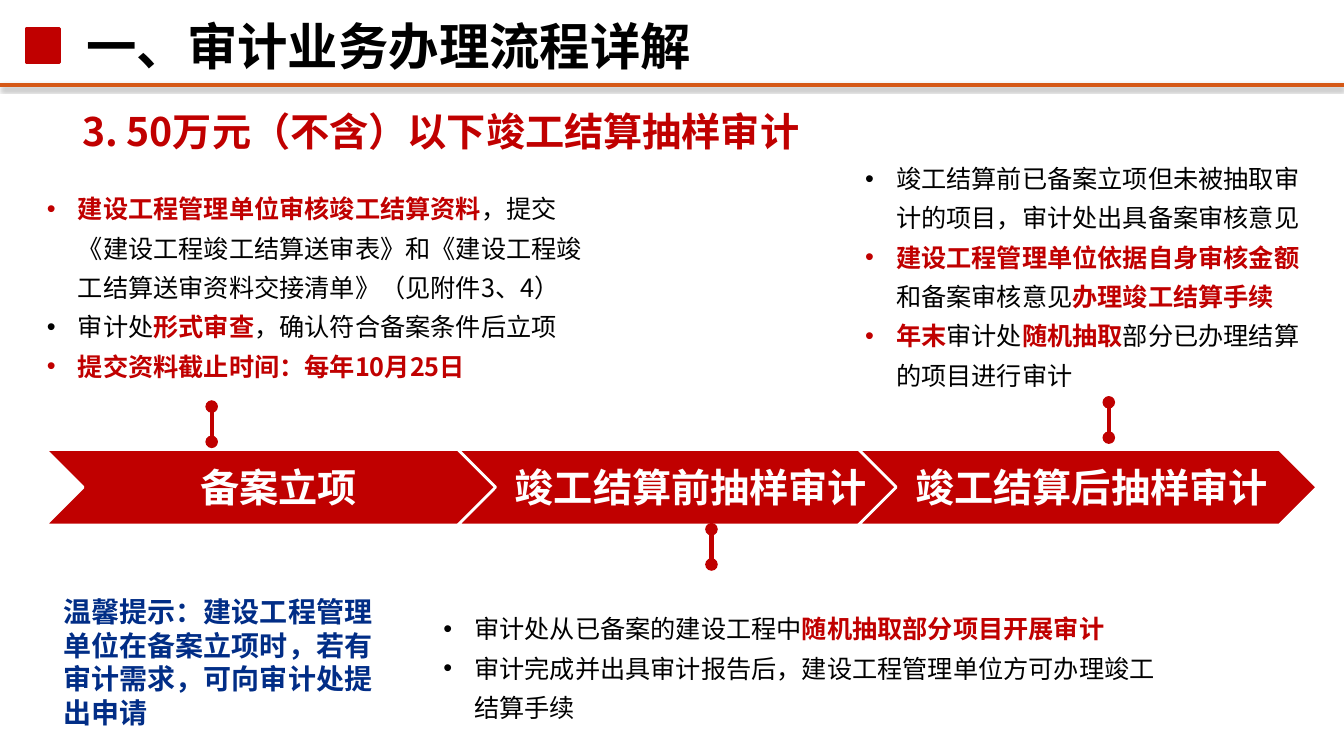
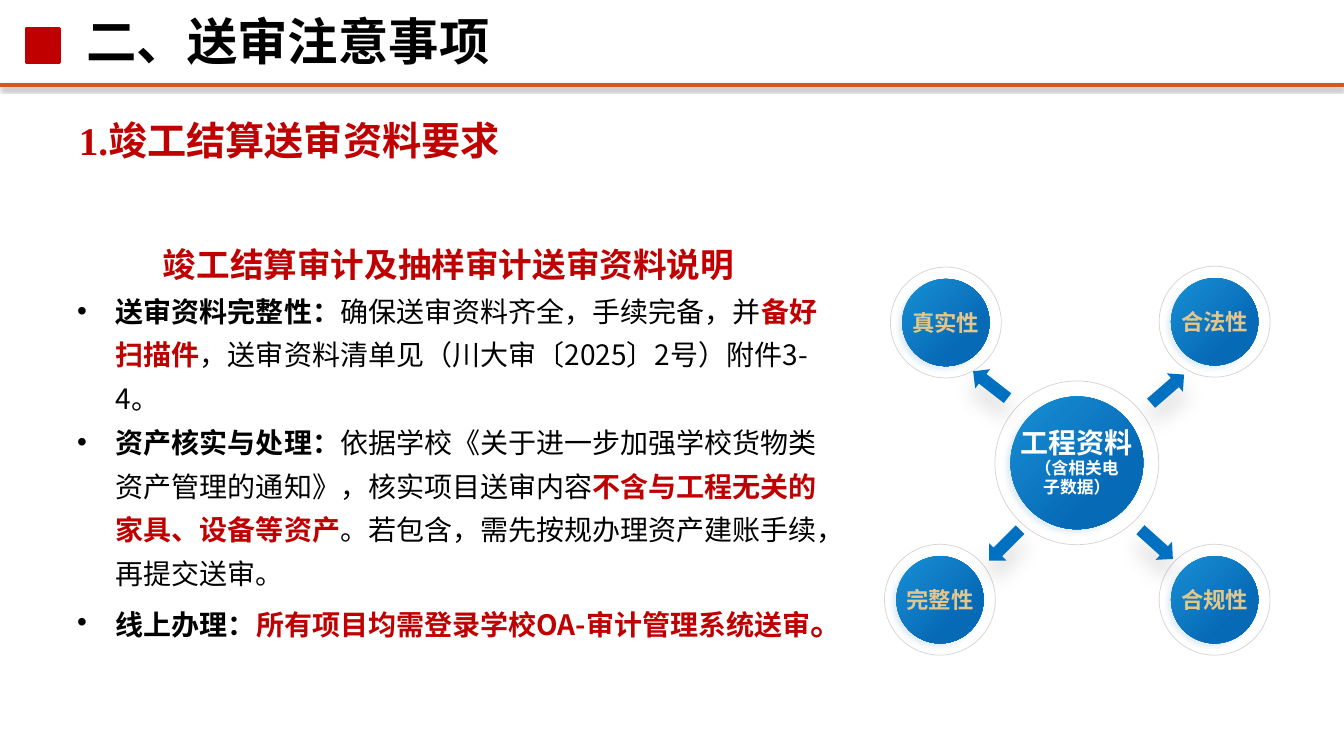
import pptx
import pptx.util
import pptx.dml.color
import pptx.enum.shapes
import pptx.enum.text
import pptx.oxml
import pptx.oxml.ns
from lxml import etree

Pt = pptx.util.Pt
KIND = pptx.enum.shapes.MSO_SHAPE
ALIGN = pptx.enum.text.PP_ALIGN
ANCHOR = pptx.enum.text.MSO_ANCHOR
qn = pptx.oxml.ns.qn

# Grid: 160 columns by 90 rows of square cells
COLS, ROWS = 160, 90
CELL = pptx.util.Inches(1) / 12

# Shared style
SANS, SERIF = "Noto Sans CJK SC", "Times New Roman"
RED, BLACK, WHITE = "C00000", "000000", "FFFFFF"
ORANGE, NAVY, BLUE, GOLD, GREY = "D55816", "012D86", "0070C0", "E2C68C", "595959"
DISC = ((0, "1890D6"), (0.71, "076AB6"))
# Shadows: colour, opacity, blur, distance, angle
RULE_SHADE = (BLACK, 35, 3.1, 1.8, 90)
ARROW_SHADE = ("404040", 20, 15, 10, 90)
DISC_SHADE = ("5B9BD5", 20, 4, 3, 135)


def cells(*nums):
    return [round(n * CELL) for n in nums]


def rgb(text):
    return pptx.dml.color.RGBColor.from_string(text)


def sub(node, tag, **attrs):
    return etree.SubElement(node, qn(tag), {k: str(v) for k, v in attrs.items()})


class Deck:
    def __init__(self):
        self.prs = pptx.Presentation()
        self.prs.slide_width, self.prs.slide_height = cells(COLS, ROWS)

    def page(self, title, top):
        """Start a slide with its band and title."""
        self.slide = self.prs.slides.add_slide(self.prs.slide_layouts[6])
        self.shapes = self.slide.shapes
        self.line((0, 10.1), (COLS, 10.1), ORANGE, shade=RULE_SHADE)
        self.shape(KIND.RECTANGLE, (3.1, 3.4, 4, 4), RED, (RED, 2))
        self.label((9.1, top, 84, 9.5), title, 36, BLACK, SERIF)

    def shade(self, node, look):
        """Put a soft outer shadow into an effect list."""
        color, alpha, blur, dist, angle = look
        cast = sub(node, "a:outerShdw", blurRad=Pt(blur), dist=Pt(dist),
                   dir=angle * 60000, algn="ctr", rotWithShape=0)
        tint = sub(cast, "a:srgbClr", val=color)
        sub(tint, "a:alpha", val=alpha * 1000)

    def line(self, start, end, color, ends=None, shade=None):
        link = self.shapes.add_connector(
            pptx.enum.shapes.MSO_CONNECTOR.STRAIGHT, *cells(*start, *end))
        link.line.color.rgb = rgb(color)
        link.line.width = Pt(3)
        if ends:
            stroke = link._element.spPr.find(qn("a:ln"))
            sub(stroke, "a:headEnd", type=ends)
            sub(stroke, "a:tailEnd", type=ends)
        effect = sub(link._element.spPr, "a:effectLst")
        if shade:
            self.shade(effect, shade)

    def shape(self, kind, box, fill=None, edge=None, shade=None):
        item = self.shapes.add_shape(kind, *cells(*box))
        item.shadow.inherit = False
        if fill:
            item.fill.solid()
            item.fill.fore_color.rgb = rgb(fill)
        else:
            item.fill.background()
        if edge:
            item.line.color.rgb = rgb(edge[0])
            item.line.width = Pt(edge[1])
        else:
            item.line.fill.background()
        if shade:
            self.shade(item._element.spPr.find(qn("a:effectLst")), shade)
        return item

    def style(self, para, size, color, bold=True, face=SANS):
        font = para.font
        font.size, font.bold, font.name = Pt(size), bold, face
        font.color.rgb = rgb(color)
        sub(para._p.pPr.find(qn("a:defRPr")), "a:ea", typeface=SANS)

    def center(self, frame, lines, color, spacing=None):
        """Centre bold lines of (text, size) in a frame."""
        frame.vertical_anchor = ANCHOR.MIDDLE
        for i, (text, size) in enumerate(lines):
            para = frame.add_paragraph() if i else frame.paragraphs[0]
            para.text = text
            para.alignment = ALIGN.CENTER
            para.line_spacing = spacing
            self.style(para, size, color)

    def frame(self, box, anchor=ANCHOR.TOP):
        frame = self.shapes.add_textbox(*cells(*box)).text_frame
        frame.word_wrap = True
        frame.vertical_anchor = anchor
        return frame

    def label(self, box, text, size, color, face=SANS, anchor=ANCHOR.MIDDLE,
              spacing=None):
        para = self.frame(box, anchor).paragraphs[0]
        para.text = text
        para.alignment = ALIGN.LEFT
        para.line_spacing = spacing
        self.style(para, size, color, face=face)

    def bullets(self, box, items, size, indent, head=None):
        """List of items; each run is text, or (text, colour[, size]) in bold."""
        frame = self.frame(box)
        para = frame.paragraphs[0]
        if head:
            para.text = head
            para.alignment = ALIGN.CENTER
            para.line_spacing = 1.3
            self.style(para, 24, RED)
        for i, runs in enumerate(items):
            if i or head:
                para = frame.add_paragraph()
            para.line_spacing = 1.3
            props = para._p.get_or_add_pPr()
            step = cells(indent)[0]
            props.set("marL", str(step))
            props.set("indent", str(-step))
            first = BLACK if isinstance(runs[0], str) else runs[0][1]
            sub(sub(props, "a:buClr"), "a:srgbClr", val=first)
            sub(props, "a:buFont", typeface="Arial")
            sub(props, "a:buChar", char="•")
            self.style(para, size, BLACK, False)
            for part in runs:
                run = para.add_run()
                if isinstance(part, str):
                    run.text = part
                    continue
                run.text = part[0]
                run.font.bold = True
                run.font.color.rgb = rgb(part[1])
                if len(part) > 2:
                    run.font.size = Pt(part[2])

    def chevron(self, left, text):
        item = self.shape(KIND.CHEVRON, (left, 53.5, 54.6, 9), RED, (WHITE, 2))
        frame = item.text_frame
        frame.margin_left, frame.margin_right = cells(1.4, 0.5)
        self.center(frame, [(text, 28)], WHITE)

    def pin(self, x, top):
        self.line((x, top + 4.2), (x, top), RED, ends="oval")

    def disc(self, x, y, ring, core, lines, color, spacing=None):
        """Gradient disc inside a thin ring, both centred on one point."""
        def around(size):
            return x - size / 2, y - size / 2, size, size

        rim = self.shape(KIND.OVAL, around(ring), edge=(GREY, 0.5))
        tint = rim._element.spPr.find(qn("a:ln")).find(".//" + qn("a:srgbClr"))
        sub(tint, "a:alpha", val=25000)
        item = self.shape(KIND.OVAL, around(core), BLUE, shade=DISC_SHADE)
        item.fill.gradient()
        item.fill.gradient_angle = 315
        for stop, (place, tone) in zip(item.fill.gradient_stops, DISC):
            stop.position = place
            stop.color.rgb = rgb(tone)
        frame = item.text_frame
        frame.word_wrap = False
        frame.margin_left = frame.margin_right = 0
        frame.margin_top = frame.margin_bottom = 0
        self.center(frame, lines, color, spacing)

    def arrow(self, x, y, turn):
        wide, high = 5.2, 2.9
        item = self.shape(KIND.RIGHT_ARROW, (x - wide / 2, y - high / 2, wide, high),
                          BLUE, shade=ARROW_SHADE)
        item.rotation = turn


def steps(deck):
    deck.page("一、审计业务办理流程详解", 0.6)
    deck.label((8.6, 12, 131, 7.1), "3. 50万元（不含）以下竣工结算抽样审计", 28, RED,
               anchor=ANCHOR.TOP, spacing=Pt(35))

    # Process band and pins
    for left, text in ((5.4, "备案立项"), (54.5, "竣工结算前抽样审计"),
                       (102.2, "竣工结算后抽样审计")):
        deck.chevron(left, text)
    for x, top in ((25.2, 48.4), (132, 47.9), (84.7, 63)):
        deck.pin(x, top)

    # Notes for each step
    notes = (
        ((4.4, 21.4, 66.5, 24.8), (
            (("建设工程管理单位审核竣工结算资料", RED),
             "，提交《建设工程竣工结算送审表》和《建设工程竣工结算送审资料交接清单》（见附件3、4）"),
            ("审计处", ("形式审查", RED), "，确认符合备案条件后立项"),
            (("提交资料截止时间：每年10月25日", RED),))),
        ((51.6, 71.4, 89.8, 15.4), (
            ("审计处从已备案的建设工程中", ("随机抽取部分项目开展审计", RED)),
            ("审计完成并出具审计报告后，建设工程管理单位方可办理竣工结算手续",))),
        ((101.8, 17.8, 56.5, 29.5), (
            ("竣工结算前已备案立项但未被抽取审计的项目，审计处出具备案审核意见",),
            (("建设工程管理单位依据自身审核金额", RED), "和备案审核意见",
             ("办理竣工结算手续", RED)),
            (("年末", RED), "审计处", ("随机抽取", RED),
             "部分已办理结算的项目进行审计"))),
    )
    for box, items in notes:
        deck.bullets(box, items, 18, 3.7)
    deck.label((6.4, 70.2, 40.7, 12.6),
               "温馨提示：建设工程管理单位在备案立项时，若有审计需求，可向审计处提出申请",
               20, NAVY, anchor=ANCHOR.TOP)


def needs(deck):
    deck.page("二、送审注意事项", 0)
    deck.label((8.2, 11.9, 147, 9.5), "1.竣工结算送审资料要求", 28, RED, SERIF)

    # Hub and its four qualities
    for x, y, text in ((144.6, 38.3, "合法性"), (144.6, 71.4, "合规性"),
                       (111.9, 71.4, "完整性"), (112.6, 38.4, "真实性")):
        deck.disc(x, y, 13.2, 10.4, [(text, 16)], GOLD)
    deck.disc(128.2, 55.1, 19.5, 15.8,
              [("工程资料", 20), ("（含相关电", 12), ("子数据）", 12)], WHITE, 0.92)
    for x, y, turn in ((139, 46.3, 319), (117.9, 45.8, 218),
                       (119.6, 64.9, 135), (137.7, 64.8, 42)):
        deck.arrow(x, y, turn)

    # Explanation
    deck.bullets((8, 27, 90.8, 52.4), (
        (("送审资料完整性：", BLACK), "确保送审资料齐全，手续完备，并", ("备好扫描件", RED),
         "，送审资料清单见（川大审〔2025〕2号）附件3-4。"),
        (("资产核实与处理：", BLACK),
         "依据学校《关于进一步加强学校货物类资产管理的通知》，核实项目送审内容",
         ("不含与工程无关的家具、设备等资产", RED),
         "。若包含，需先按规办理资产建账手续，再提交送审。"),
        (("线上办理：", BLACK), ("所有项目均需登录学校OA-审计管理系统送审", RED),
         ("。", RED, 24)),
    ), 20, 4.6, head="竣工结算审计及抽样审计送审资料说明")


def main():
    deck = Deck()
    steps(deck)
    needs(deck)
    deck.prs.save("out.pptx")


if __name__ == "__main__":
    main()
